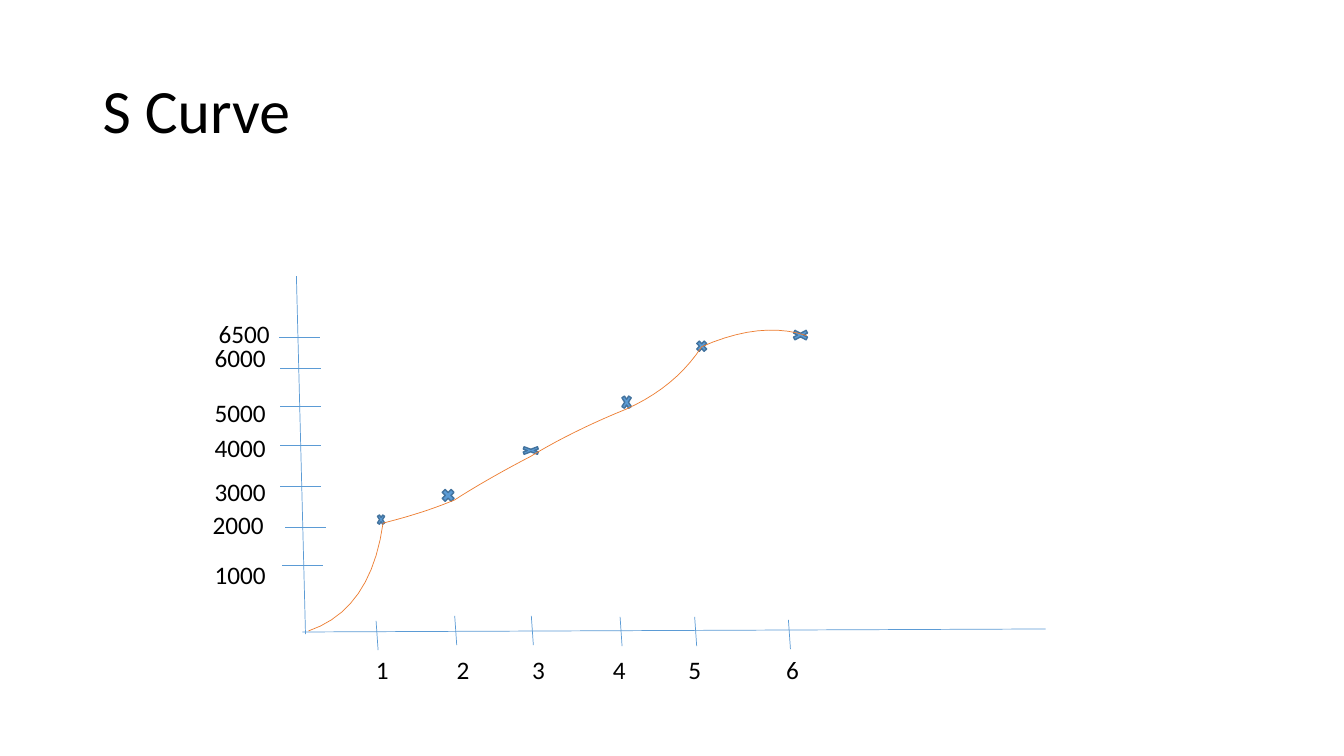
from collections import namedtuple

from lxml import etree
from pptx import Presentation
from pptx.dml.color import RGBColor
from pptx.enum.shapes import MSO_CONNECTOR, MSO_SHAPE
from pptx.enum.text import MSO_ANCHOR
from pptx.oxml.ns import qn
from pptx.util import Inches, Pt

STRAIGHT = MSO_CONNECTOR.STRAIGHT
MULTIPLY = MSO_SHAPE.MATH_MULTIPLY
MIDDLE, TOP = MSO_ANCHOR.MIDDLE, MSO_ANCHOR.TOP
BLUE, DARK_BLUE, ORANGE, BLACK = "5B9BD5", "43739E", "ED7D31", "000000"

TICK_LENGTH = 0.4          # ticks on the value axis
TICK_HEIGHT = 0.29         # ticks on the period axis
TICK_LEAN = 0.02
LABEL_WIDTH, LABEL_HEIGHT = 0.8, 0.4
TEXT_INSET = 0.1           # default left inset of a text box
STEPS = 10                 # straight pieces in each stretch of the curve

# Each stretch of the curve starts where the last one ended, is pulled
# towards "bend" and ends at "reach", beside the marker of its period.
Period = namedtuple("Period", "name label_x tick marker bend reach")
periods = [
    Period("1", 3.73, (3.73, 6.16), (3.73, 5.08, 0.1, 0.15), (3.68, 6.05), (3.8, 5.19)),
    Period("2", 4.53, (4.51, 6.11), (4.36, 4.83, 0.17, 0.17), (4.2, 5.09), (4.51, 4.96)),
    Period("3", 5.28, (5.27, 6.11), (5.13, 4.42, 0.27, 0.1), (4.82, 4.76), (5.26, 4.53)),
    Period("4", 6.08, (6.15, 6.12), (6.15, 3.89, 0.13, 0.2), (5.67, 4.28), (6.21, 4.06)),
    Period("5", 6.83, (6.89, 6.12), (6.89, 3.36, 0.14, 0.15), (6.7, 3.84), (6.96, 3.44)),
    Period("6", 7.8, (7.82, 6.15), (7.82, 3.26, 0.24, 0.13), (7.55, 3.18), (8, 3.33)),
]
curve_start = (3.06, 6.26)

Level = namedtuple("Level", "name left top tick_left tick_y")
levels = [
    Level("1000", 2.03, 5.5, 2.8, 5.61),
    Level("2000", 2.01, 5, 2.83, 5.23),
    Level("3000", 2.03, 4.68, 2.78, 4.83),
    Level("4000", 2.03, 4.24, 2.78, 4.42),
    Level("5000", 2.03, 3.89, 2.78, 4.03),
    Level("6000", 2.03, 3.35, 2.78, 3.65),
    Level("6500", 2.07, 3.11, 2.77, 3.35),
]

deck = Presentation()
deck.slide_width, deck.slide_height = Inches(13.33), Inches(7.5)
page = deck.slides.add_slide(deck.slide_layouts[6])


def add_text(text, left, top, width, height, size=18, anchor=TOP):
    """Add a one-line text box and return its paragraph."""
    box = page.shapes.add_textbox(Inches(left), Inches(top), Inches(width), Inches(height))
    box.text_frame.word_wrap = True
    box.text_frame.vertical_anchor = anchor
    para = box.text_frame.paragraphs[0]
    span = para.add_run()
    span.text = text
    span.font.name = "Calibri"
    span.font.size = Pt(size)
    span.font.color.rgb = RGBColor.from_string(BLACK)
    return para


def add_line(x1, y1, x2, y2):
    line = page.shapes.add_connector(STRAIGHT, Inches(x1), Inches(y1), Inches(x2), Inches(y2))
    line.line.color.rgb = RGBColor.from_string(BLUE)
    line.line.width = Pt(0.5)
    etree.SubElement(line._element.spPr, qn("a:effectLst"))


title = add_text("S Curve", 0.92, 0.4, 11.5, 1.45, 44, MIDDLE)
title.line_spacing = 0.9

# Value axis
add_line(2.94, 2.74, 3.03, 6.29)
for level in levels:
    add_line(level.tick_left, level.tick_y, level.tick_left + TICK_LENGTH, level.tick_y)
    add_text(level.name, level.left, level.top, LABEL_WIDTH, LABEL_HEIGHT)

# Period axis, with its labels in one row set by tab stops
add_line(3, 6.27, 10.37, 6.24)
for period in periods:
    x, y = period.tick
    add_line(x, y, x + TICK_LEAN, y + TICK_HEIGHT)

first_x = periods[0].label_x
names = "\t".join(period.name for period in periods)
row = add_text(names, first_x - TEXT_INSET, 6.44, 4.76, LABEL_HEIGHT)
tab_list = etree.SubElement(row._p.get_or_add_pPr(), qn("a:tabLst"))
for period in periods[1:]:
    stop = Inches(period.label_x - first_x)
    etree.SubElement(tab_list, qn("a:tab"), pos=str(stop), algn="l")

# Markers
for period in periods:
    marker = page.shapes.add_shape(MULTIPLY, *[Inches(length) for length in period.marker])
    marker.shadow.inherit = False
    marker.fill.solid()
    marker.fill.fore_color.rgb = RGBColor.from_string(BLUE)
    marker.line.color.rgb = RGBColor.from_string(DARK_BLUE)
    marker.line.width = Pt(1)

# S curve: one quadratic Bezier stretch per period
curve_points = []
start = curve_start
for period in periods:
    for step in range(1, STEPS + 1):
        t = step / STEPS
        curve_points.append([
            Inches((1 - t) ** 2 * a + 2 * t * (1 - t) * b + t ** 2 * c)
            for a, b, c in zip(start, period.bend, period.reach)
        ])
    start = period.reach

builder = page.shapes.build_freeform(*[Inches(length) for length in curve_start])
builder.add_line_segments(curve_points, close=False)
curve = builder.convert_to_shape()
curve.shadow.inherit = False
curve.fill.background()
curve.line.color.rgb = RGBColor.from_string(ORANGE)
curve.line.width = Pt(0.5)

deck.save("out.pptx")
